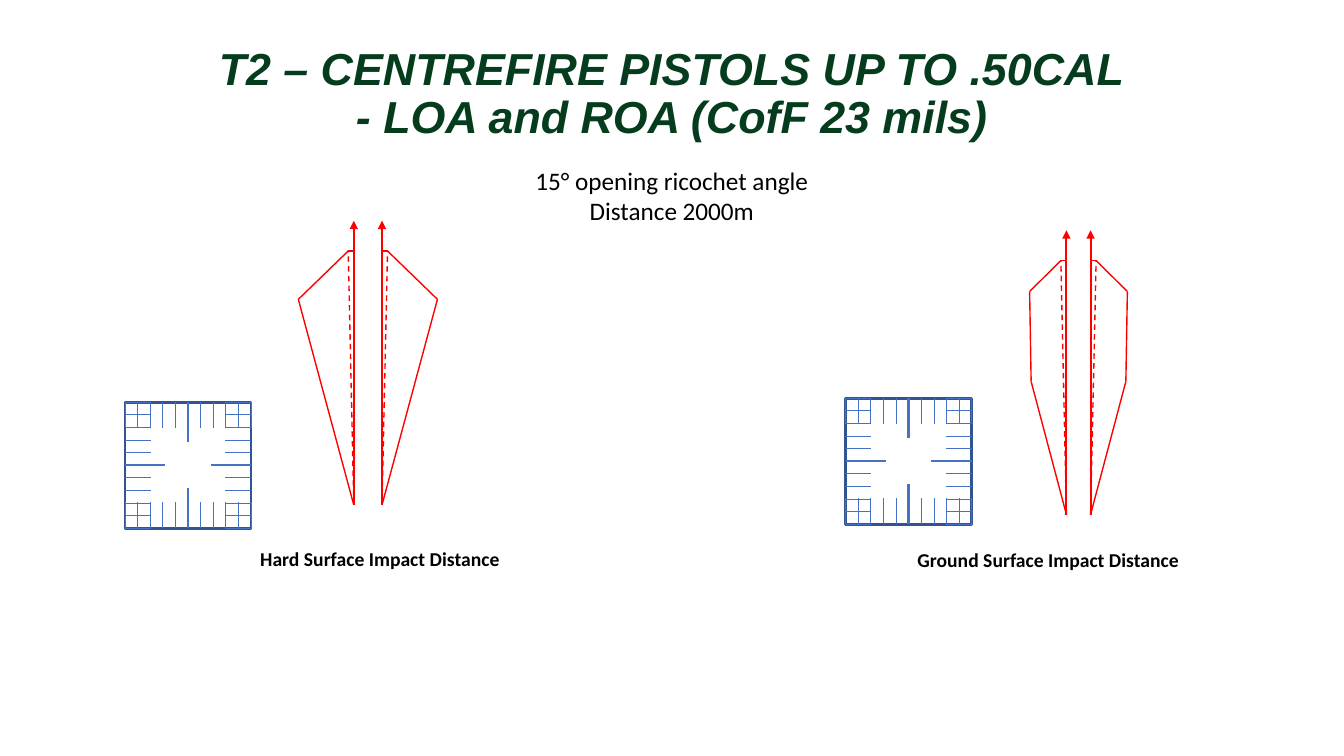
from lxml import etree
from pptx import Presentation
from pptx import util as u
from pptx.dml.color import RGBColor
from pptx.enum import dml, shapes, text
from pptx.oxml.ns import qn

COLOURS = {"title": "053C1E", "body": "000000", "frame": "325491",
           "tick": "4472C4", "trace": "FF0000"}
CELL = u.Inches(7.5) / 60
COLUMNS, ROWS = 106.67, 60
RETICLE_STEPS = 10
SHORT_TICK, LONG_TICK = 2.04, 3.2
ARROW_RISE, SHOULDER_RISE, SHOULDER_OUT = 22.56, 20.16, 0.44


def grid(cells):
    return u.Emu(round(cells * CELL))


def colour(key):
    return RGBColor.from_string(COLOURS[key])


def add_label(slide, place, lines, size, font="Calibri", key="body", bold=False,
              italic=False, spacing=None, anchor=text.MSO_ANCHOR.TOP,
              fit=text.MSO_AUTO_SIZE.SHAPE_TO_FIT_TEXT):
    label = slide.shapes.add_textbox(*map(grid, place)).text_frame
    label.word_wrap = True
    label.auto_size = fit
    label.vertical_anchor = anchor
    for index, line in enumerate(lines):
        paragraph = label.add_paragraph() if index else label.paragraphs[0]
        paragraph.alignment = text.PP_ALIGN.CENTER
        paragraph.line_spacing = spacing
        run = paragraph.add_run()
        run.text = line
        run.font.name, run.font.size = font, u.Pt(size)
        run.font.bold, run.font.italic = bold, italic
        run.font.color.rgb = colour(key)


def add_stroke(group, start, end, key, width, dashed=False, arrow=False):
    stroke = group.shapes.add_connector(
        shapes.MSO_CONNECTOR.STRAIGHT, *map(grid, (*start, *end)))
    stroke.line.color.rgb = colour(key)
    stroke.line.width = u.Pt(width)
    if dashed:
        stroke.line.dash_style = dml.MSO_LINE.DASH
    properties = stroke._element.spPr
    if arrow:
        outline = properties.find(qn("a:ln"))
        etree.SubElement(outline, qn("a:tailEnd"), type="triangle")
    etree.SubElement(properties, qn("a:effectLst"))
    return stroke


def add_reticle(group, left, top):
    size = RETICLE_STEPS
    right, bottom = left + size, top + size
    frame = group.shapes.add_shape(
        shapes.MSO_SHAPE.RECTANGLE, *map(grid, (left, top, size, size)))
    frame.shadow.inherit = False
    frame.fill.background()
    frame.line.color.rgb = colour("frame")
    frame.line.width = u.Pt(2)
    for step in range(size + 1):
        middle = step == size // 2
        reach = LONG_TICK if middle else SHORT_TICK
        column, row = left + step, top + step
        ticks = [
            ((column, top), (column, top + reach)),
            ((left, row), (left + reach, row)),
            ((column, bottom), (column, bottom - reach)),
            ((right, row), (right - reach, row)),
        ]
        for side, (start, end) in enumerate(ticks):
            tick = add_stroke(group, start, end, "tick", 1.75 if middle else 0.5)
            if middle:
                tick.begin_connect(frame, side)


def add_danger_area(group, centre, base, half_gap, wing):
    shoulder = (SHOULDER_OUT, SHOULDER_RISE)
    boundary = [(0, 0), *wing, shoulder, (0, SHOULDER_RISE)]
    for side in (1, -1):
        def place(point):
            out, rise = point
            return centre + side * (half_gap + out), base - rise

        add_stroke(group, place((0, 0)), place((0, ARROW_RISE)), "trace", 1.5, arrow=True)
        add_stroke(group, place((0, 0)), place(shoulder), "trace", 1, dashed=True)
        for start, end in zip(boundary, boundary[1:]):
            add_stroke(group, place(start), place(end), "trace", 1)


def main():
    deck = Presentation()
    deck.slide_width, deck.slide_height = grid(COLUMNS), grid(ROWS)
    slide = deck.slides.add_slide(deck.slide_layouts[6])

    add_label(slide, (0, 3.44, COLUMNS, 8.16),
              ["T2 – CENTREFIRE PISTOLS UP TO .50CAL", "- LOA and ROA (CofF 23 mils)"],
              32, "Arial", "title", bold=True, italic=True, spacing=0.9,
              anchor=text.MSO_ANCHOR.MIDDLE, fit=text.MSO_AUTO_SIZE.NONE)
    add_label(slide, (15.04, 43.04, 30.24, 2.72),
              ["Hard Surface Impact Distance"], 14, bold=True)
    add_label(slide, (68.08, 43.12, 30.24, 4.56),
              ["Ground Surface Impact Distance"], 14, bold=True)

    hard_surface = slide.shapes.add_group_shape()
    add_reticle(hard_surface, 9.92, 31.92)
    add_danger_area(hard_surface, 29.2, 40.08, 1.12, [(4.4, 16.32)])

    ground_surface = slide.shapes.add_group_shape()
    add_reticle(ground_surface, 67.12, 31.6)
    add_danger_area(ground_surface, 85.6, 40.84, 0.96, [(2.8, 10.56), (2.92, 17.7)])

    add_label(slide, (36.96, 12.72, 32.72, 5.68),
              ["15° opening ricochet angle", "Distance 2000m"], 18)
    deck.save("out.pptx")


if __name__ == "__main__":
    main()
